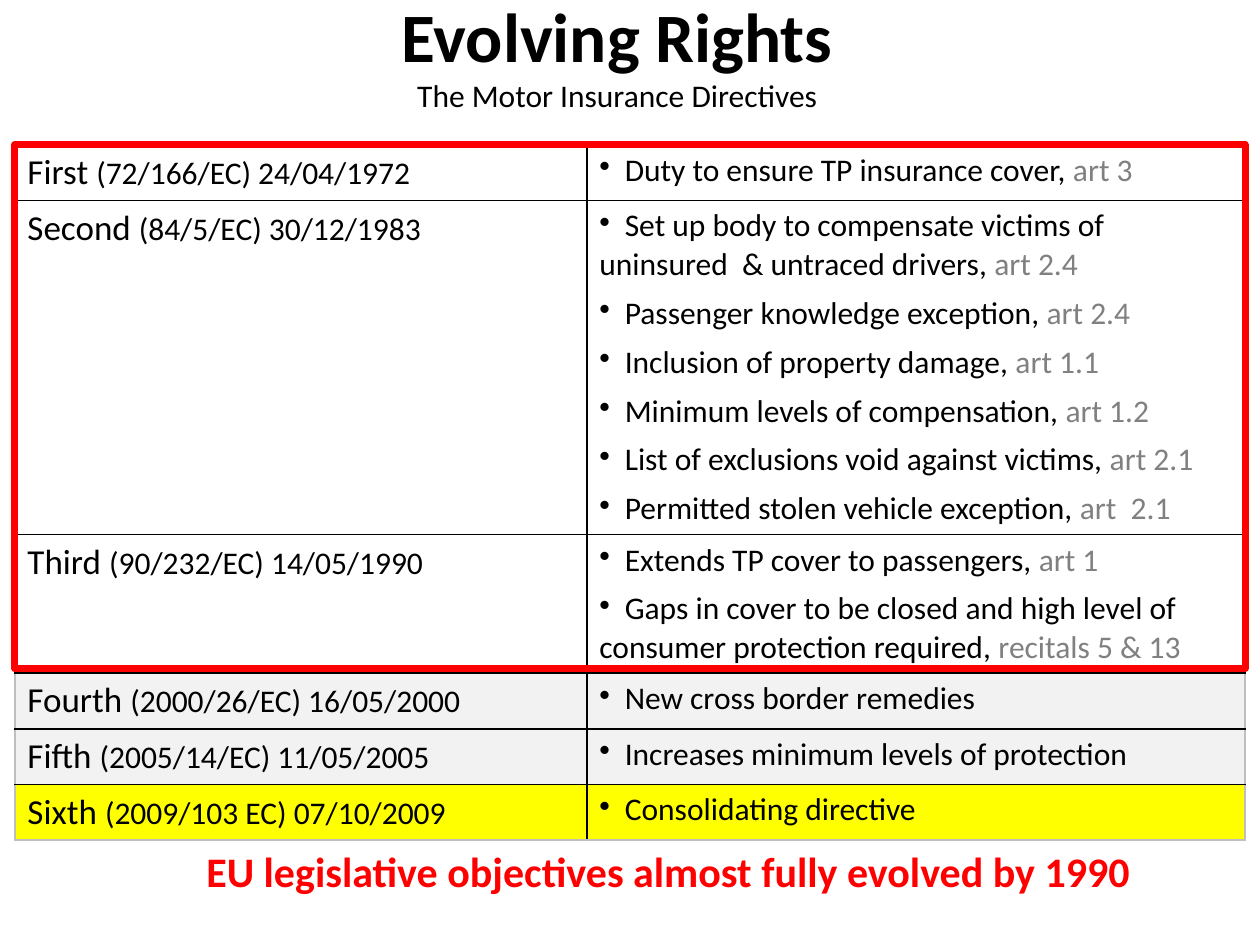
"""Builds a slide that sets out the six EU motor insurance directives."""
import dataclasses

import pptx
import pptx.dml.color
import pptx.enum.shapes
import pptx.enum.text
import pptx.oxml
import pptx.oxml.ns
import pptx.util

Cm = pptx.util.Cm
Pt = pptx.util.Pt


@dataclasses.dataclass(frozen=True)
class Theme:
    font: str = "Calibri"
    ink: str = "000000"
    muted: str = "808080"
    accent: str = "FF0000"
    edge: str = "BFBFBF"
    later: str = "F2F2F2"
    current: str = "FFFF00"
    title: float = 39.6
    closing: float = 24
    name: float = 20
    body: float = 18


THEME = Theme()
LEFT, TOP, WIDTH = 0.3, 2.92, 24.8
COLUMNS = (11.53, 13.27)
ROW_HEIGHTS = (1.09, 6.73, 2.74, 1.12, 1.12, 1.12)
FRAMED_ROWS = 3

DIRECTIVES = (
    ("First", "(72/166/EC) 24/04/1972", None,
     (("Duty to ensure TP insurance cover, ", "art 3"),)),
    ("Second", "(84/5/EC) 30/12/1983", None,
     (("Set up body to compensate victims of uninsured  & untraced drivers, ", "art 2.4"),
      ("Passenger knowledge exception, ", "art 2.4"),
      ("Inclusion of property damage, ", "art 1.1"),
      ("Minimum levels of compensation, ", "art 1.2"),
      ("List of exclusions void against victims, ", "art 2.1"),
      ("Permitted stolen vehicle exception, ", "art  2.1"))),
    ("Third", "(90/232/EC) 14/05/1990", None,
     (("Extends TP cover to passengers, ", "art 1"),
      ("Gaps in cover to be closed and high level of consumer protection required, ",
       "recitals 5 & 13"))),
    ("Fourth", "(2000/26/EC) 16/05/2000", THEME.later,
     (("New cross border remedies", ""),)),
    ("Fifth", "(2005/14/EC) 11/05/2005", THEME.later,
     (("Increases minimum levels of protection", ""),)),
    ("Sixth", "(2009/103 EC) 07/10/2009", THEME.current,
     (("Consolidating directive", ""),)),
)


def rgb(value):
    return pptx.dml.color.RGBColor.from_string(value)


def write(p, text, size=THEME.body, color=THEME.ink, bold=False):
    r = p.add_run()
    r.text = text
    r.font.name = THEME.font
    r.font.size = Pt(size)
    r.font.bold = bold
    r.font.color.rgb = rgb(color)


def add_bullet(p):
    pPr = p._p.get_or_add_pPr()
    pPr.set("marL", "0")
    pPr.set("indent", "0")
    pPr.append(pptx.oxml.parse_xml(
        f'<a:buChar {pptx.oxml.ns.nsdecls("a")} char="•"/>'))


def set_borders(cell, colors):
    tcPr = cell._tc.get_or_add_tcPr()
    for side, color in zip("LRTB", colors):
        tcPr.append(pptx.oxml.parse_xml(
            f'<a:ln{side} {pptx.oxml.ns.nsdecls("a")} w="{Pt(1)}"><a:solidFill>'
            f'<a:srgbClr val="{color}"/></a:solidFill></a:ln{side}>'))


def fill_cell(cell, color):
    if color:
        cell.fill.solid()
        cell.fill.fore_color.rgb = rgb(color)
    else:
        cell.fill.background()


def add_title(s):
    sp = s.shapes.title
    sp.left, sp.top, sp.width, sp.height = Cm(0), Cm(-0.28), Cm(24.89), Cm(2.72)
    tf = sp.text_frame
    tf.vertical_anchor = pptx.enum.text.MSO_ANCHOR.MIDDLE
    p = tf.paragraphs[0]
    p.alignment = pptx.enum.text.PP_ALIGN.CENTER
    write(p, "Evolving Rights", size=THEME.title, bold=True)
    p.add_line_break()
    write(p, "The Motor Insurance Directives")


def add_directives(s):
    last = len(DIRECTIVES) - 1
    table = s.shapes.add_table(len(DIRECTIVES), len(COLUMNS), Cm(LEFT), Cm(TOP),
                               Cm(WIDTH), Cm(sum(ROW_HEIGHTS))).table
    table.first_row = table.horz_banding = False
    for column, width in zip(table.columns, COLUMNS):
        column.width = Cm(width)
    for i, (name, reference, color, points) in enumerate(DIRECTIVES):
        table.rows[i].height = Cm(ROW_HEIGHTS[i])
        label, content = table.cell(i, 0), table.cell(i, 1)
        above = THEME.ink if i > 0 else THEME.edge
        below = THEME.ink if i < last else THEME.edge
        set_borders(label, (THEME.edge, THEME.ink, above, below))
        set_borders(content, (THEME.ink, THEME.edge, above, below))
        fill_cell(label, color)
        fill_cell(content, color)

        p = label.text_frame.paragraphs[0]
        p.space_after = Pt(6)
        write(p, f"{name} ", size=THEME.name)
        write(p, reference)

        tf = content.text_frame
        for j, (text, article) in enumerate(points):
            p = tf.add_paragraph() if j else tf.paragraphs[0]
            p.space_after = Pt(6)
            add_bullet(p)
            write(p, f"  {text}")
            if article:
                write(p, article, color=THEME.muted)


def add_frame(s):
    sp = s.shapes.add_shape(pptx.enum.shapes.MSO_SHAPE.RECTANGLE, Cm(LEFT), Cm(TOP),
                            Cm(WIDTH), Cm(sum(ROW_HEIGHTS[:FRAMED_ROWS])))
    sp.shadow.inherit = False
    sp.fill.background()
    sp.line.color.rgb = rgb(THEME.accent)
    sp.line.width = Pt(4)


def add_closing(s):
    sp = s.shapes.add_textbox(Cm(3.91), Cm(16.92), Cm(19.33), Cm(1.27))
    tf = sp.text_frame
    tf.word_wrap = False
    tf.auto_size = pptx.enum.text.MSO_AUTO_SIZE.SHAPE_TO_FIT_TEXT
    write(tf.paragraphs[0], "EU legislative objectives almost fully evolved by 1990",
          size=THEME.closing, color=THEME.accent, bold=True)


def main():
    prs = pptx.Presentation()
    prs.slide_width, prs.slide_height = Cm(25.4), Cm(19.05)
    s = prs.slides.add_slide(prs.slide_layouts[5])
    add_title(s)
    add_directives(s)
    add_frame(s)
    add_closing(s)
    prs.save("out.pptx")


if __name__ == "__main__":
    main()
